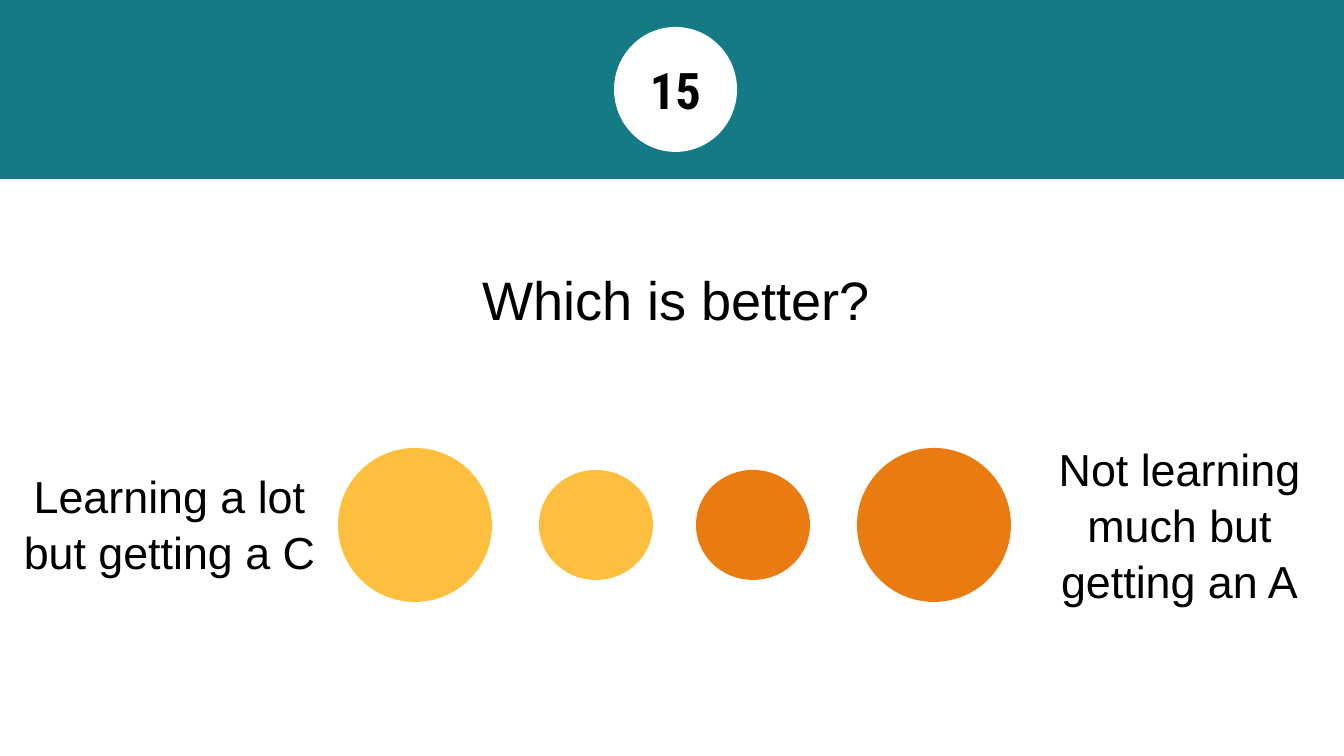
"""Build the "Which is better?" comparison slide."""
from pptx import Presentation
from pptx.dml.color import RGBColor
from pptx.enum.shapes import MSO_SHAPE
from pptx.enum.text import MSO_ANCHOR, MSO_AUTO_SIZE, PP_ALIGN
from pptx.util import Emu, Pt

PIXEL = 914400 / 134.4
THEME = {
    "teal": "137A86", "white": "FFFFFF", "black": "000000",
    "yellow": "FFBF3E", "orange": "E97B11",
    "title": {"name": "Arial", "size": Pt(29), "bold": False},
    "label": {"name": "Arial", "size": Pt(24), "bold": False},
    "badge": {"name": "Roboto Condensed", "size": Pt(27), "bold": True},
}

QUESTION = ("Which is better?", (50, 251, 1253, 93))
NUMBER = "15"
LABELS = [
    ("Learning a lot but getting a C", (5, 454, 329, 146)),
    ("Not learning much but getting an A", (1015, 427, 329, 202)),
]
CIRCLE_CENTER = 525
CIRCLES = [
    (338, 154, 154, "yellow"),
    (857, 154, 154, "orange"),
    (539, 114, 110, "yellow"),
    (696, 114, 110, "orange"),
]


def px(value):
    return Emu(round(value * PIXEL))


def add_figure(slide, kind, place, color):
    shape = slide.shapes.add_shape(kind, *map(px, place))
    shape.shadow.inherit = False
    shape.fill.solid()
    shape.fill.fore_color.rgb = RGBColor.from_string(THEME[color])
    shape.line.fill.background()
    return shape


def write(box, text, style, anchor=MSO_ANCHOR.TOP, spacing=1.04):
    frame = box.text_frame
    settings = {"word_wrap": True, "auto_size": MSO_AUTO_SIZE.NONE, "vertical_anchor": anchor}
    for side in ("left", "top", "right", "bottom"):
        settings[f"margin_{side}"] = px(13)
    for name, value in settings.items():
        setattr(frame, name, value)
    para = frame.paragraphs[0]
    para.alignment = PP_ALIGN.CENTER
    para.line_spacing = spacing
    para.space_before = Pt(0)
    span = para.add_run()
    span.text = text
    for name, value in THEME[style].items():
        setattr(span.font, name, value)
    span.font.color.rgb = RGBColor.from_string(THEME["black"])


def main():
    deck = Presentation()
    deck.slide_width, deck.slide_height = px(1344), px(756)
    page = deck.slides.add_slide(deck.slide_layouts[5])

    add_figure(page, MSO_SHAPE.RECTANGLE, (0, 0, 1348, 179), "teal")
    badge = add_figure(page, MSO_SHAPE.OVAL, (614, 27, 123, 125), "white")
    write(badge, NUMBER, "badge", MSO_ANCHOR.MIDDLE, 1.0)

    title = page.shapes.title
    text, place = QUESTION
    for name, value in zip(("left", "top", "width", "height"), place):
        setattr(title, name, px(value))
    write(title, text, "title")

    for left, width, height, color in CIRCLES:
        top = CIRCLE_CENTER - height / 2
        add_figure(page, MSO_SHAPE.OVAL, (left, top, width, height), color)
    for text, place in LABELS:
        write(page.shapes.add_textbox(*map(px, place)), text, "label")

    deck.save("out.pptx")


if __name__ == "__main__":
    main()
